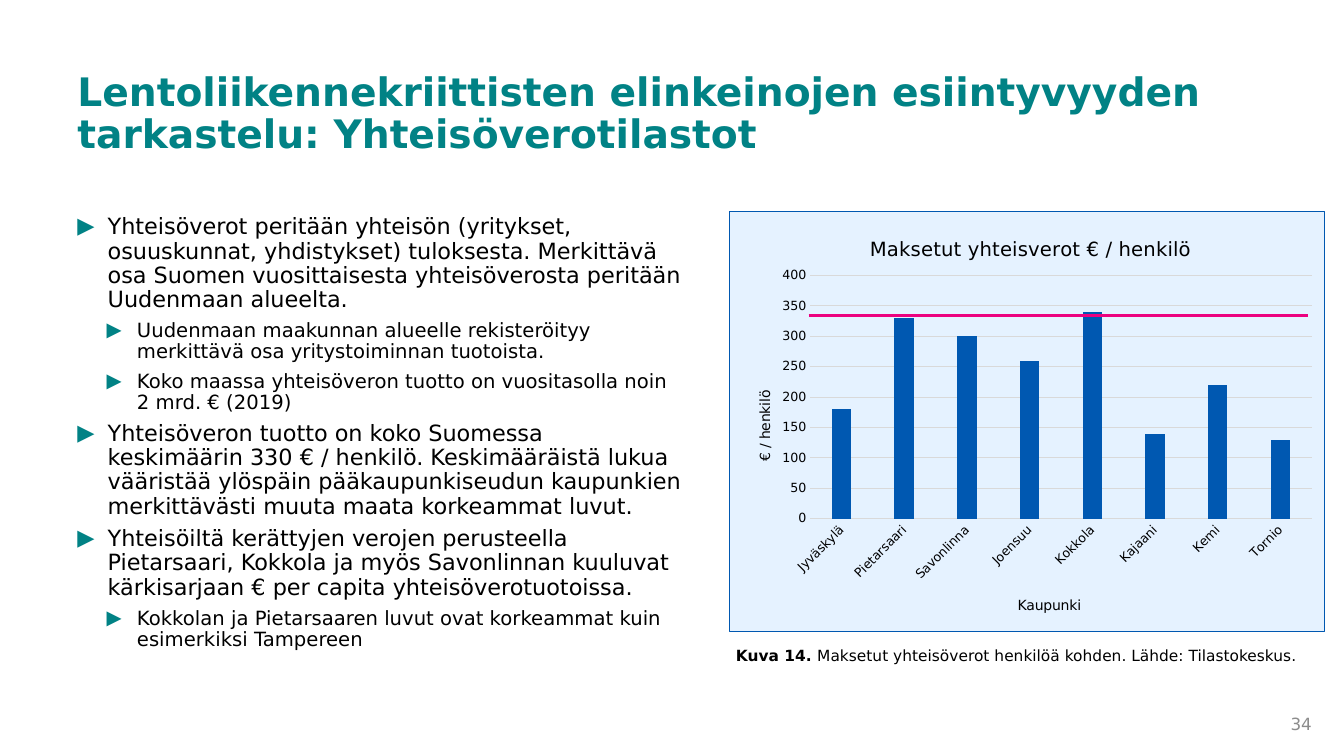
from lxml import etree
from pptx import Presentation
from pptx.chart.data import CategoryChartData
from pptx.dml.color import RGBColor
from pptx.enum.chart import XL_CHART_TYPE, XL_TICK_MARK
from pptx.enum.shapes import MSO_CONNECTOR
from pptx.enum.text import MSO_ANCHOR, PP_ALIGN
from pptx.oxml import parse_xml
from pptx.oxml.ns import nsdecls, qn
from pptx.util import Inches, Pt

COLUMN = XL_CHART_TYPE.COLUMN_CLUSTERED
NO_TICK = XL_TICK_MARK.NONE
STRAIGHT = MSO_CONNECTOR.STRAIGHT
TOP, MIDDLE = MSO_ANCHOR.TOP, MSO_ANCHOR.MIDDLE
LEFT, RIGHT = PP_ALIGN.LEFT, PP_ALIGN.RIGHT

# Content
FONT = "DejaVu Sans"
COLORS = {
    "teal": "018285", "black": "000000", "gray": "8C8C8C", "grid": "D9D9D9",
    "panel": "E5F2FF", "blue": "0058B1", "pink": "EC017F",
}
TITLE = "Lentoliikennekriittisten elinkeinojen esiintyvyyden tarkastelu: Yhteisöverotilastot"
BULLETS = [  # (level, text)
    (0, "Yhteisöverot peritään yhteisön (yritykset, osuuskunnat, yhdistykset) tuloksesta. "
        "Merkittävä osa Suomen vuosittaisesta yhteisöverosta peritään Uudenmaan alueelta."),
    (1, "Uudenmaan maakunnan alueelle rekisteröityy merkittävä osa yritystoiminnan tuotoista."),
    (1, "Koko maassa yhteisöveron tuotto on vuositasolla noin 2 mrd. € (2019)"),
    (0, "Yhteisöveron tuotto on koko Suomessa keskimäärin 330 € / henkilö. Keskimääräistä "
        "lukua vääristää ylöspäin pääkaupunkiseudun kaupunkien merkittävästi muuta maata "
        "korkeammat luvut."),
    (0, "Yhteisöiltä kerättyjen verojen perusteella Pietarsaari, Kokkola ja myös Savonlinnan "
        "kuuluvat kärkisarjaan € per capita yhteisöverotuotoissa."),
    (1, "Kokkolan ja Pietarsaaren luvut ovat korkeammat kuin esimerkiksi Tampereen"),
]
LEVEL_SIZES = (16, 14)
TAX_PER_PERSON = {
    "Jyväskylä": 180, "Pietarsaari": 330, "Savonlinna": 300, "Joensuu": 260,
    "Kokkola": 340, "Kajaani": 140, "Kemi": 220, "Tornio": 130,
}
CHART_TITLE = "Maksetut yhteisverot € / henkilö"
CITY_TITLE, TAX_TITLE = "Kaupunki", "€ / henkilö"
CAPTION = [("Kuva 14. ", True), ("Maksetut yhteisöverot henkilöä kohden. Lähde: Tilastokeskus.", False)]
PAGE_NUMBER = "34"


def rgb(name):
    return RGBColor.from_string(COLORS[name])


def set_all(target, **values):
    for name, value in values.items():
        setattr(target, name, value)


def style_font(font, size, color="black", bold=False):
    set_all(font, name=FONT, size=Pt(size), bold=bold)
    font.color.rgb = rgb(color)


def add_text_frame(slide, box, anchor=TOP):
    frame = slide.shapes.add_textbox(*map(Inches, box)).text_frame
    set_all(frame, word_wrap=True, vertical_anchor=anchor)
    return frame


def add_run(paragraph, text, size, color="black", bold=False):
    run = paragraph.add_run()
    run.text = text
    style_font(run.font, size, color, bold)


def add_bullet(paragraph, level):
    properties = paragraph._p.get_or_add_pPr()
    properties.set("marL", str(Inches((0.3, 0.59)[level])))
    properties.set("indent", str(Inches(-0.3)))
    color = etree.SubElement(properties, qn("a:buClr"))
    etree.SubElement(color, qn("a:srgbClr"), val=COLORS["teal"])
    etree.SubElement(properties, qn("a:buFont"), typeface=FONT)
    etree.SubElement(properties, qn("a:buChar"), char="▶")


def place(element, index, **fractions):
    """Position a chart part by fractions of the chart's size."""
    for old in element.findall(qn("c:layout")):
        element.remove(old)
    layout = etree.Element(qn("c:layout"))
    manual = etree.SubElement(layout, qn("c:manualLayout"))
    if "w" in fractions:
        etree.SubElement(manual, qn("c:layoutTarget"), val="inner")
    for mode in ("xMode", "yMode"):
        etree.SubElement(manual, qn(f"c:{mode}"), val="edge")
    for name, value in fractions.items():
        etree.SubElement(manual, qn(f"c:{name}"), val=str(value))
    element.insert(index, layout)


def add_chart_title(title, text, size, x, y, rotation=0):
    frame = title.text_frame
    add_run(frame.paragraphs[0], text, size)
    frame._txBody.bodyPr.set("rot", str(rotation * 60000))
    place(title._element, 1, x=x, y=y)


def add_tax_chart(slide):
    data = CategoryChartData(number_format="#,##0")
    data.categories = list(TAX_PER_PERSON)
    data.add_series("Series 1", list(TAX_PER_PERSON.values()))
    box = map(Inches, (7.23, 2.09, 5.91, 4.18))
    chart = slide.shapes.add_chart(COLUMN, *box, data).chart
    style_font(chart.font, 10)
    set_all(chart, has_legend=False, has_title=True)

    # Bars
    plot = chart.plots[0]
    set_all(plot, gap_width=219, overlap=-27, vary_by_categories=False)
    fill = plot.series[0].format.fill
    fill.solid()
    fill.fore_color.rgb = rgb("blue")

    # Axes
    cities, taxes = chart.category_axis, chart.value_axis
    for axis in (cities, taxes):
        set_all(axis, major_tick_mark=NO_TICK, minor_tick_mark=NO_TICK, has_title=True)
        style_font(axis.tick_labels.font, 9)
    cities._element.find(qn("c:txPr")).find(qn("a:bodyPr")).set("rot", str(-45 * 60000))
    set_all(taxes, minimum_scale=0, maximum_scale=400, major_unit=50, has_major_gridlines=True)
    set_all(taxes.tick_labels, number_format="#,##0", number_format_is_linked=False)
    for line in (cities.format.line, taxes.major_gridlines.format.line):
        line.color.rgb = rgb("grid")
        line.width = Pt(0.75)
    taxes.format.line.fill.background()

    # Titles and plot area
    add_chart_title(chart.chart_title, CHART_TITLE, 14, 0.23, 0.05)
    add_chart_title(cities.axis_title, CITY_TITLE, 10, 0.48, 0.91)
    add_chart_title(taxes.axis_title, TAX_TITLE, 10, 0.04, 0.42, -90)
    space = chart._chartSpace
    place(space.chart.plotArea, 0, x=0.136, y=0.153, w=0.843, h=0.579)

    # Panel behind the chart
    space.chart.addnext(parse_xml(
        f'<c:spPr {nsdecls("c", "a")}>'
        f'<a:solidFill><a:srgbClr val="{COLORS["panel"]}"/></a:solidFill>'
        f'<a:ln w="{Pt(0.75)}"><a:solidFill><a:srgbClr val="{COLORS["blue"]}"/></a:solidFill></a:ln>'
        '</c:spPr>'))


def main():
    presentation = Presentation()
    set_all(presentation, slide_width=Inches(13.33), slide_height=Inches(7.5))
    slide = presentation.slides.add_slide(presentation.slide_layouts[6])

    # Title
    paragraph = add_text_frame(slide, (0.67, 0.67, 11.75, 1.21)).paragraphs[0]
    paragraph.line_spacing = 0.9
    add_run(paragraph, TITLE, 28, "teal", True)

    # Bullets
    frame = add_text_frame(slide, (0.67, 2.09, 6.23, 4.67))
    for index, (level, text) in enumerate(BULLETS):
        paragraph = frame.add_paragraph() if index else frame.paragraphs[0]
        set_all(paragraph, level=level, line_spacing=0.9, space_before=Pt(6 if index else 0))
        add_bullet(paragraph, level)
        add_run(paragraph, text, LEVEL_SIZES[level])

    # Chart with the national average line
    add_tax_chart(slide)
    average = slide.shapes.add_connector(STRAIGHT, *map(Inches, (8.02, 3.13, 12.97, 3.13)))
    average.line.color.rgb = rgb("pink")
    average.line.width = Pt(1.5)
    etree.SubElement(average._element.spPr, qn("a:effectLst"))

    # Caption
    paragraph = add_text_frame(slide, (7.2, 6.36, 6.13, 0.29)).paragraphs[0]
    for text, bold in CAPTION:
        add_run(paragraph, text, 11, bold=bold)

    # Page number
    paragraph = add_text_frame(slide, (12.36, 7.04, 0.75, 0.28), MIDDLE).paragraphs[0]
    paragraph.alignment = RIGHT
    add_run(paragraph, PAGE_NUMBER, 12, "gray")

    presentation.save("out.pptx")


if __name__ == "__main__":
    main()
